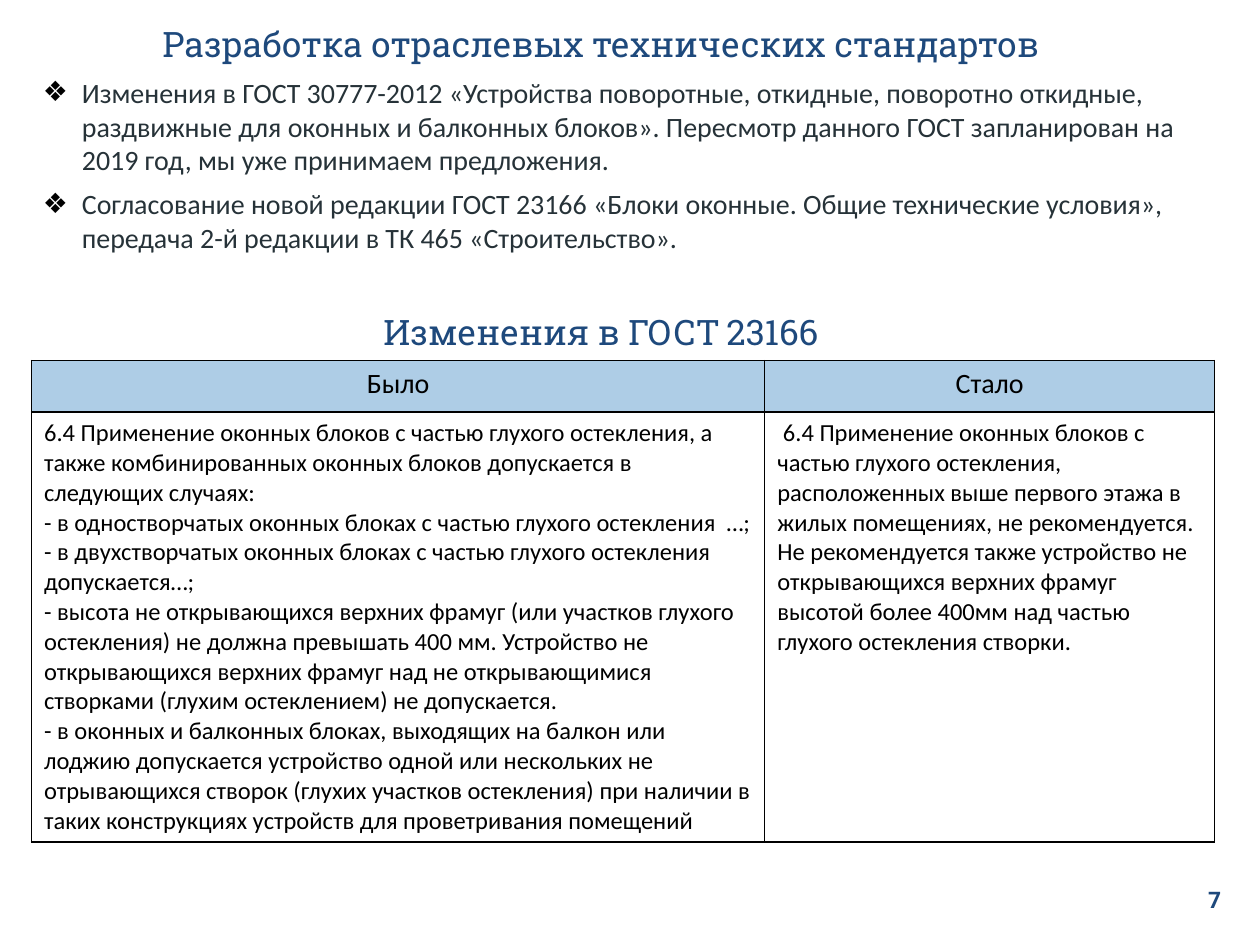
from lxml import etree
from pptx import Presentation
from pptx.dml.color import RGBColor
from pptx.enum.text import MSO_ANCHOR, MSO_AUTO_SIZE, PP_ALIGN
from pptx.oxml.ns import qn
from pptx.util import Inches, Pt

LEFT, CENTER, RIGHT = PP_ALIGN.LEFT, PP_ALIGN.CENTER, PP_ALIGN.RIGHT
TOP, BOTTOM = MSO_ANCHOR.TOP, MSO_ANCHOR.BOTTOM
NO_AUTOFIT = MSO_AUTO_SIZE.NONE
BLUE, BLACK = "1E497C", "000000"


def format_text(text_frame, font_name, size, color, alignment=LEFT, bold=False):
    for paragraph in text_frame.paragraphs:
        paragraph.alignment = alignment
        for run in paragraph.runs:
            run.font.name = font_name
            run.font.size = Pt(size)
            run.font.bold = bold
            run.font.color.rgb = RGBColor.from_string(color)


def place_text(shape, box, text, anchor=TOP):
    shape.left, shape.top, shape.width, shape.height = [Inches(value) for value in box]
    text_frame = shape.text_frame
    text_frame.text = text
    text_frame.word_wrap = True
    text_frame.auto_size = NO_AUTOFIT
    text_frame.vertical_anchor = anchor
    text_frame.margin_left = text_frame.margin_right = Inches(0.1)
    text_frame.margin_top = text_frame.margin_bottom = Inches(0.1)
    return text_frame


presentation = Presentation()
presentation.slide_width = Inches(10)
presentation.slide_height = Inches(7.5)
slide = presentation.slides.add_slide(presentation.slide_layouts[1])

table_heading = slide.shapes.add_textbox(0, 0, 0, 0)
for shape, top, text in [
    (slide.shapes.title, 0.16, "Разработка отраслевых технических стандартов"),
    (table_heading, 2.45, "Изменения в ГОСТ 23166"),
]:
    text_frame = place_text(shape, (0.35, top, 8.84, 0.45), text, BOTTOM)
    format_text(text_frame, "Roboto Slab", 20, BLUE, CENTER)

standards = [
    "Изменения в ГОСТ 30777-2012 «Устройства поворотные, откидные, поворотно откидные, "
    "раздвижные для оконных и балконных блоков». Пересмотр данного ГОСТ запланирован на "
    "2019 год, мы уже принимаем предложения.",
    "Согласование новой редакции ГОСТ 23166 «Блоки оконные. Общие технические условия», "
    "передача 2-й редакции в ТК 465 «Строительство».",
]
text_frame = place_text(slide.placeholders[1], (0.24, 0.5, 9.51, 1.77), "\n".join(standards))
for index, paragraph in enumerate(text_frame.paragraphs):
    paragraph.space_before = Pt(6 if index else 0)
    properties = paragraph._p.get_or_add_pPr()
    properties.set("marL", str(Inches(0.31)))
    properties.set("indent", str(Inches(-0.31)))
    bullet_color = etree.SubElement(properties, qn("a:buClr"))
    etree.SubElement(bullet_color, qn("a:srgbClr"), val=BLACK)
    etree.SubElement(properties, qn("a:buChar"), char="❖")
format_text(text_frame, "Calibri", 16, "263238")

rows = [
    ["Было", "Стало"],
    [
        "6.4 Применение оконных блоков с частью глухого остекления, а также "
        "комбинированных оконных блоков допускается в следующих случаях:\n"
        "- в одностворчатых оконных блоках с частью глухого остекления  …;\n"
        "- в двухстворчатых оконных блоках с частью глухого остекления допускается…;\n"
        "- высота не открывающихся верхних фрамуг (или участков глухого остекления) "
        "не должна превышать 400 мм. Устройство не открывающихся верхних фрамуг над "
        "не открывающимися створками (глухим остеклением) не допускается.\n"
        "- в оконных и балконных блоках, выходящих на балкон или лоджию допускается "
        "устройство одной или нескольких не отрывающихся створок (глухих участков "
        "остекления) при наличии в таких конструкциях устройств для проветривания помещений",
        " 6.4 Применение оконных блоков с частью глухого остекления, расположенных выше "
        "первого этажа в жилых помещениях, не рекомендуется. Не рекомендуется также "
        "устройство не открывающихся верхних фрамуг высотой более 400мм над частью "
        "глухого остекления створки.",
    ],
]
table = slide.shapes.add_table(
    2, 2, Inches(0.25), Inches(2.86), Inches(9.39), Inches(3.54)
).table
table.horz_banding = False
for column, width in zip(table.columns, (5.82, 3.57)):
    column.width = Inches(width)
for row, height in zip(table.rows, (0.41, 3.13)):
    row.height = Inches(height)

for row_index, texts in enumerate(rows):
    for column_index, text in enumerate(texts):
        cell = table.cell(row_index, column_index)
        cell.text = text
        properties = cell._tc.get_or_add_tcPr()
        for side in ("a:lnL", "a:lnR", "a:lnT", "a:lnB"):
            border = etree.SubElement(properties, qn(side), w=str(Pt(0.75)))
            border_fill = etree.SubElement(border, qn("a:solidFill"))
            etree.SubElement(border_fill, qn("a:srgbClr"), val=BLACK)
        if row_index == 0:
            cell.fill.solid()
            cell.fill.fore_color.rgb = RGBColor.from_string("AECDE6")
            format_text(cell.text_frame, "Calibri", 16, BLACK, CENTER)
        else:
            cell.fill.background()
            format_text(cell.text_frame, "Calibri", 14, BLACK)

page_number = slide.shapes.add_textbox(0, 0, 0, 0)
text_frame = place_text(page_number, (9.19, 6.93, 0.6, 0.57), "7")
format_text(text_frame, "Roboto", 13, BLUE, RIGHT, bold=True)

presentation.save("out.pptx")
